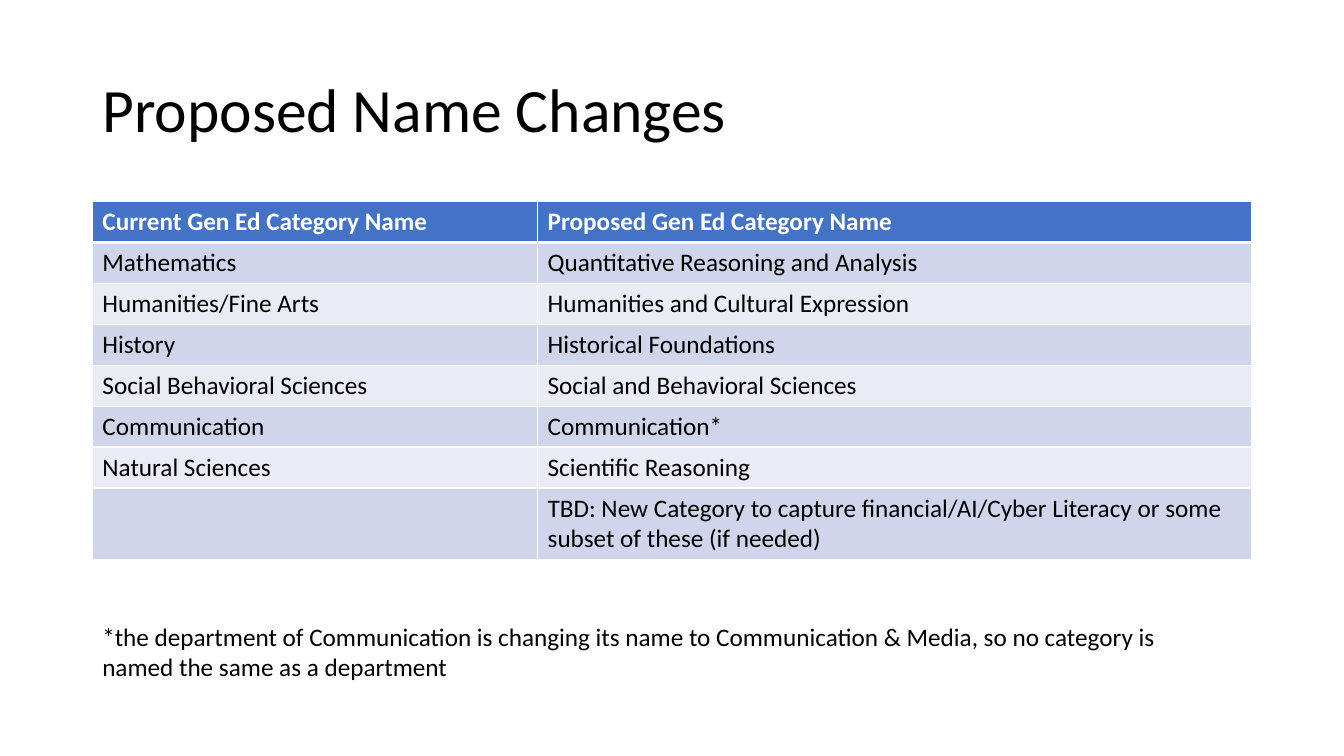
from typing import NamedTuple

from lxml import etree
from pptx import Presentation
from pptx.dml.color import RGBColor
from pptx.enum.text import MSO_ANCHOR, MSO_AUTO_SIZE, PP_ALIGN
from pptx.oxml.ns import qn
from pptx.util import Emu, Pt

LEFT = PP_ALIGN.LEFT
TOP = MSO_ANCHOR.TOP
MIDDLE = MSO_ANCHOR.MIDDLE
NO_AUTOFIT = MSO_AUTO_SIZE.NONE

FONT = "Calibri"
BLACK = RGBColor(0x00, 0x00, 0x00)
WHITE = RGBColor(0xFF, 0xFF, 0xFF)
HEADER_BLUE = RGBColor(0x44, 0x72, 0xC4)
BAND_DARK = RGBColor(0xCF, 0xD5, 0xEA)
BAND_LIGHT = RGBColor(0xE9, 0xEB, 0xF5)

EMU_PER_PX = 9525
MARGIN = 88
CONTENT_WIDTH = 1104
ROW_HEIGHT = 39
LAST_ROW_HEIGHT = 67
COLUMN_WIDTHS = (424, 680)


class Renaming(NamedTuple):
    current: str
    proposed: str


RENAMINGS = [
    Renaming("Current Gen Ed Category Name", "Proposed Gen Ed Category Name"),
    Renaming("Mathematics", "Quantitative Reasoning and Analysis"),
    Renaming("Humanities/Fine Arts", "Humanities and Cultural Expression"),
    Renaming("History", "Historical Foundations"),
    Renaming("Social Behavioral Sciences", "Social and Behavioral Sciences"),
    Renaming("Communication", "Communication*"),
    Renaming("Natural Sciences", "Scientific Reasoning"),
    Renaming(
        "",
        "TBD: New Category to capture financial/AI/Cyber Literacy "
        "or some subset of these (if needed)",
    ),
]
FOOTNOTE = (
    "*the department of Communication is changing its name to "
    "Communication & Media, so no category is named the same as a department"
)


def px(length: int) -> Emu:
    return Emu(length * EMU_PER_PX)


def format_paragraph(paragraph, size: int, color: RGBColor, bold: bool = False) -> None:
    paragraph.alignment = LEFT
    paragraph.font.name = FONT
    paragraph.font.size = Pt(size)
    paragraph.font.bold = bold
    paragraph.font.color.rgb = color


def add_borders(cell, widths: dict[str, int]) -> None:
    properties = cell._tc.get_or_add_tcPr()
    for side, width in widths.items():
        line = etree.SubElement(properties, qn(f"a:{side}"), w=str(Pt(width)))
        fill = etree.SubElement(line, qn("a:solidFill"))
        etree.SubElement(fill, qn("a:srgbClr"), val=str(WHITE))


def add_title(slide, text: str) -> None:
    title = slide.shapes.title
    title.left, title.top = px(MARGIN), px(38)
    title.width, title.height = px(CONTENT_WIDTH), px(139)
    frame = title.text_frame
    frame.text = text
    frame.auto_size = NO_AUTOFIT
    frame.vertical_anchor = MIDDLE
    paragraph = frame.paragraphs[0]
    paragraph.line_spacing = 0.9
    format_paragraph(paragraph, 44, BLACK)


def add_renaming_table(slide, renamings: list[Renaming]) -> None:
    last = len(renamings) - 1
    height = ROW_HEIGHT * last + LAST_ROW_HEIGHT
    table = slide.shapes.add_table(
        len(renamings), len(COLUMN_WIDTHS),
        px(MARGIN), px(192), px(CONTENT_WIDTH), px(height),
    ).table
    for column, width in zip(table.columns, COLUMN_WIDTHS):
        column.width = px(width)
    for index, renaming in enumerate(renamings):
        is_header = index == 0
        band = BAND_DARK if index % 2 else BAND_LIGHT
        table.rows[index].height = px(LAST_ROW_HEIGHT if index == last else ROW_HEIGHT)
        borders = {
            "lnL": 1,
            "lnR": 1,
            "lnT": 3 if index == 1 else 1,
            "lnB": 3 if is_header else 1,
        }
        for cell, text in zip(table.rows[index].cells, renaming):
            cell.text = text
            cell.vertical_anchor = TOP
            add_borders(cell, borders)
            cell.fill.solid()
            cell.fill.fore_color.rgb = HEADER_BLUE if is_header else band
            format_paragraph(
                cell.text_frame.paragraphs[0], 18,
                WHITE if is_header else BLACK, is_header,
            )


def add_footnote(slide, text: str) -> None:
    footnote = slide.shapes.add_textbox(px(MARGIN), px(587), px(1090), px(68))
    frame = footnote.text_frame
    frame.word_wrap = True
    frame.text = text
    format_paragraph(frame.paragraphs[0], 18, BLACK)


def main() -> None:
    presentation = Presentation()
    presentation.slide_width, presentation.slide_height = px(1280), px(720)
    slide = presentation.slides.add_slide(
        presentation.slide_layouts.get_by_name("Title Only")
    )
    add_title(slide, "Proposed Name Changes")
    add_renaming_table(slide, RENAMINGS)
    add_footnote(slide, FOOTNOTE)
    presentation.save("out.pptx")


if __name__ == "__main__":
    main()
